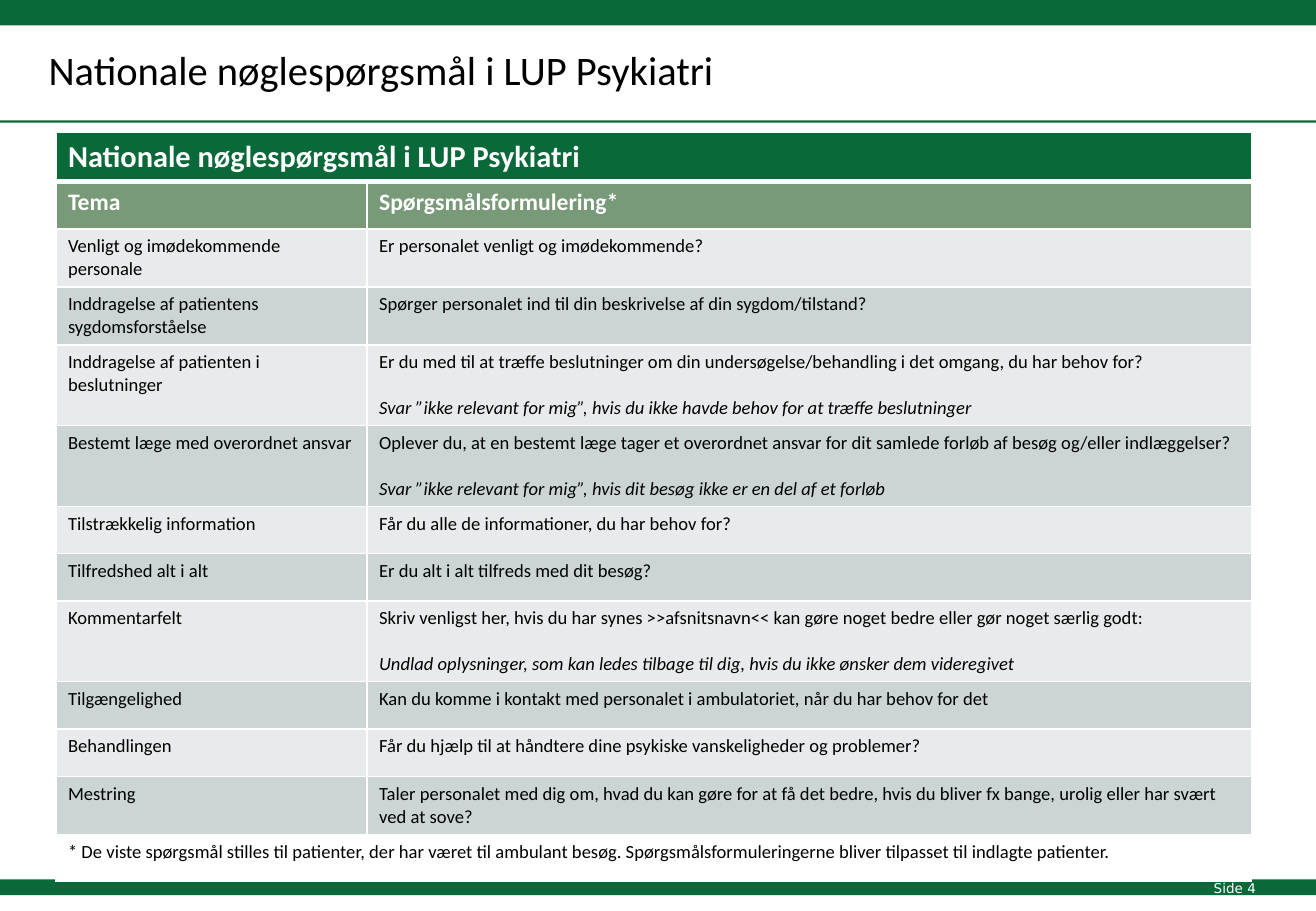
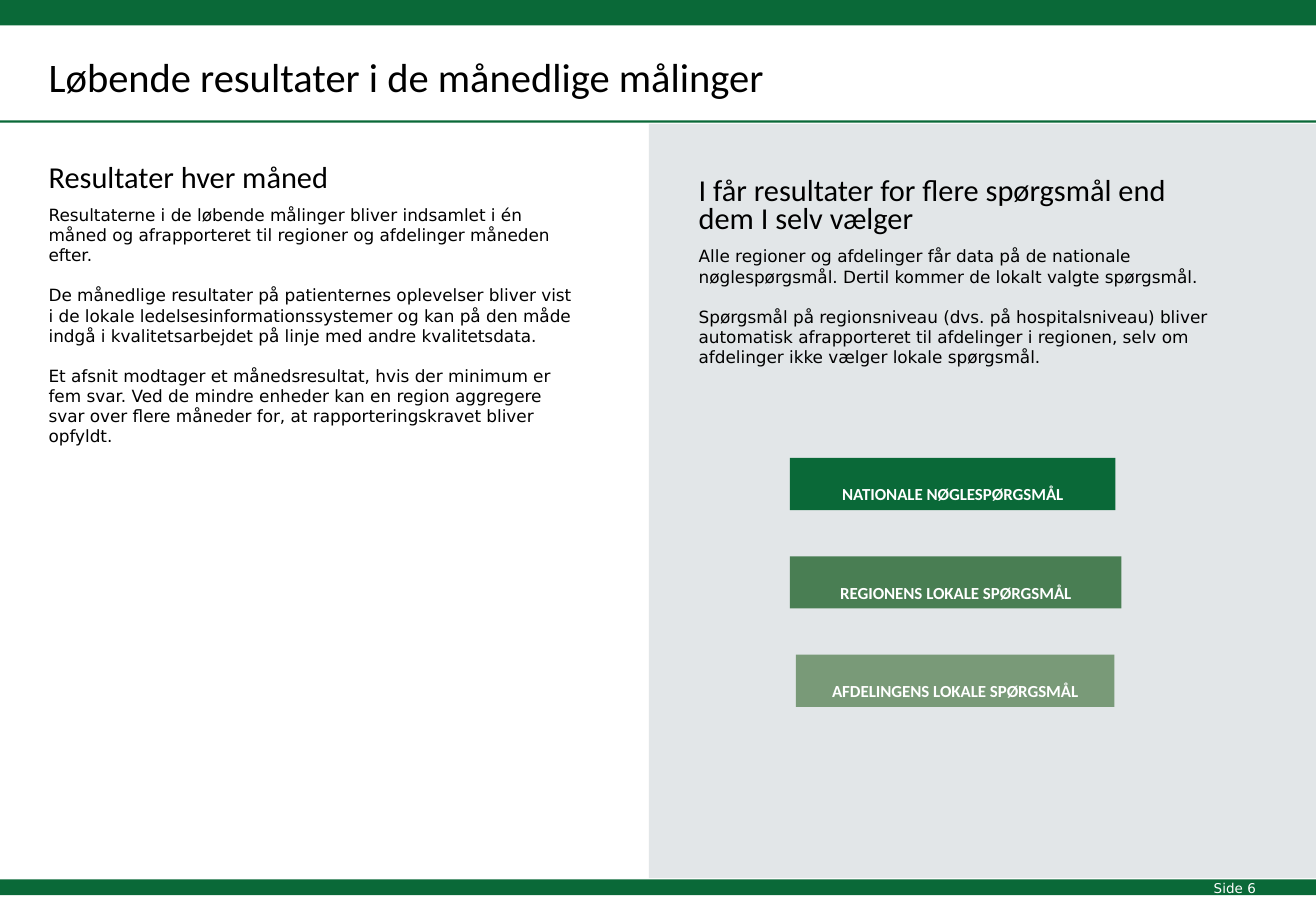
from lxml import etree
from pptx import Presentation
from pptx import util as u
from pptx.dml.color import RGBColor
from pptx.enum import shapes, text
from pptx.oxml.ns import qn

GREEN, MID_GREEN, SAGE = "0A6938", "497E53", "799A78"
LIGHT, GREY, SLATE = "E7EBEB", "CCD4D5", "425B67"
WHITE, BLACK = "FFFFFF", "000000"
HEAD_FONT, BODY_FONT = "Calibri", "DejaVu Sans"
TITLE_ONLY, TWO_CONTENT = 5, 3

QUESTIONS = [
    ("Venligt og imødekommende personale", 0.45,
     ["Er personalet venligt og imødekommende?"]),
    ("Inddragelse af patientens sygdomsforståelse", 0.45,
     ["Spørger personalet ind til din beskrivelse af din sygdom/tilstand?"]),
    ("Inddragelse af patienten i beslutninger", 0.63,
     ["Er du med til at træffe beslutninger om din undersøgelse/behandling i det omgang, du har behov for?",
      "Svar ”ikke relevant for mig”, hvis du ikke havde behov for at træffe beslutninger"]),
    ("Bestemt læge med overordnet ansvar", 0.63,
     ["Oplever du, at en bestemt læge tager et overordnet ansvar for dit samlede forløb af besøg og/eller indlæggelser?",
      "Svar ”ikke relevant for mig”, hvis dit besøg ikke er en del af et forløb"]),
    ("Tilstrækkelig information", 0.39,
     ["Får du alle de informationer, du har behov for?"]),
    ("Tilfredshed alt i alt", 0.39,
     ["Er du alt i alt tilfreds med dit besøg?"]),
    ("Kommentarfelt", 0.63,
     ["Skriv venligst her, hvis du har synes >>afsnitsnavn<< kan gøre noget bedre eller gør noget særlig godt:",
      "Undlad oplysninger, som kan ledes tilbage til dig, hvis du ikke ønsker dem videregivet"]),
    ("Tilgængelighed", 0.39,
     ["Kan du komme i kontakt med personalet i ambulatoriet, når du har behov for det"]),
    ("Behandlingen", 0.39,
     ["Får du hjælp til at håndtere dine psykiske vanskeligheder og problemer?"]),
    ("Mestring", 0.45,
     ["Taler personalet med dig om, hvad du kan gøre for at få det bedre, hvis du bliver fx bange, "
      "urolig eller har svært ved at sove?"]),
]
FOOTNOTE = ("* De viste spørgsmål stilles til patienter, der har været til ambulant besøg. "
            "Spørgsmålsformuleringerne bliver tilpasset til indlagte patienter.")
MONTHLY = [
    "Resultaterne i de løbende målinger bliver indsamlet i én måned og afrapporteret til regioner "
    "og afdelinger måneden efter.",
    "De månedlige resultater på patienternes oplevelser bliver vist i de lokale "
    "ledelsesinformationssystemer og kan på den måde indgå i kvalitetsarbejdet på linje med andre "
    "kvalitetsdata.",
    "Et afsnit modtager et månedsresultat, hvis der minimum er fem svar. Ved de mindre enheder kan "
    "en region aggregere svar over flere måneder for, at rapporteringskravet bliver opfyldt.",
]
LEVELS = [
    "Alle regioner og afdelinger får data på de nationale nøglespørgsmål. Dertil kommer de lokalt "
    "valgte spørgsmål.",
    "Spørgsmål på regionsniveau (dvs. på hospitalsniveau) bliver automatisk afrapporteret til "
    "afdelinger i regionen, selv om afdelinger ikke vælger lokale spørgsmål.",
]


def rgb(color):
    return RGBColor.from_string(color)


def place(sp, *box):
    sp.left, sp.top, sp.width, sp.height = (u.Inches(n) for n in box)


def add_run(p, wording, size, color=BLACK, font=HEAD_FONT, bold=False, italic=False):
    r = p.add_run()
    r.text = wording
    f = r.font
    f.size, f.name, f.bold, f.italic = u.Pt(size), font, bold, italic
    f.color.rgb = rgb(color)


class Deck:
    def __init__(self):
        self.prs = Presentation()
        self.prs.slide_width, self.prs.slide_height = u.Inches(10.83), u.Inches(7.5)
        self.s = None

    def slide(self, layout, title, top, height, number, line=None):
        first = self.s is None
        self.s = self.prs.slides.add_slide(self.prs.slide_layouts[layout])
        if first:
            self.master_bands()
        sp = self.s.shapes.title
        place(sp, 0.3, top, 9.13, height)
        p = self.frame(sp).paragraphs[0]
        p.alignment = text.PP_ALIGN.LEFT
        if line:
            p.line_spacing = u.Pt(line)
        add_run(p, title, 24)
        sp = self.s.shapes.add_textbox(*(u.Inches(n) for n in (9.89, 7.2, 0.56, 0.24)))
        tf = self.frame(sp)
        tf.word_wrap = False
        add_run(tf.paragraphs[0], f"Side {number}", 8, WHITE, BODY_FONT)

    def master_bands(self):
        """Move the three green bands to the slide master, shared by all slides."""
        tree = self.prs.slide_master.shapes.element
        for top, height in ((-0.07, 0.28), (0.99, 0.02), (7.24, 0.13)):
            band = self.rect(0, top, 10.83, height, GREEN)
            tree.insert(2, band.element)

    def frame(self, sp):
        tf = sp.text_frame
        tf.word_wrap = True
        tf.auto_size = text.MSO_AUTO_SIZE.NONE
        tf.vertical_anchor = text.MSO_ANCHOR.TOP
        return tf

    def rect(self, left, top, width, height, color):
        box = (u.Inches(n) for n in (left, top, width, height))
        sp = self.s.shapes.add_shape(shapes.MSO_SHAPE.RECTANGLE, *box)
        sp.shadow.inherit = False
        sp.fill.solid()
        sp.fill.fore_color.rgb = rgb(color)
        sp.line.fill.background()
        return sp

    def panel(self, left, top, width, height, color, opacity):
        """Draw a see-through rectangle behind everything else on the slide."""
        sp = self.rect(left, top, width, height, color)
        clr = sp.element.spPr.find(".//" + qn("a:srgbClr"))
        etree.SubElement(clr, qn("a:alpha"), val=str(opacity * 1000))
        self.s.shapes.element.insert(2, sp.element)

    def bar(self, left, top, width, height, color, label):
        sp = self.rect(left, top, width, height, color)
        tf = self.frame(sp)
        tf.vertical_anchor = text.MSO_ANCHOR.BOTTOM
        p = tf.paragraphs[0]
        p.alignment = text.PP_ALIGN.CENTER
        add_run(p, label, 10, WHITE, bold=True)

    def body(self, idx, box, heading, paragraphs, line=None):
        sp = self.s.placeholders[idx]
        place(sp, *box)
        tf = self.frame(sp)
        for i, wording in enumerate([heading] + paragraphs):
            p = tf.paragraphs[0] if i == 0 else tf.add_paragraph()
            pPr = p._p.get_or_add_pPr()
            pPr.set("marL", "0")
            pPr.set("indent", "0")
            etree.SubElement(pPr, qn("a:buNone"))
            p.space_before = u.Pt(11.6 if i > 1 else 0)
            if i == 0:
                p.space_after = u.Pt(6)
                if line:
                    p.line_spacing = u.Pt(line)
                add_run(p, wording, 18)
            else:
                add_run(p, wording, 10, font=BODY_FONT)

    def cell(self, cell, fill, lines, size=11, color=BLACK, bold=False, top=1, bottom=1):
        """Fill a cell; any line after the first is an italic note, one line below."""
        tcPr = cell._tc.get_or_add_tcPr()
        for side, width in (("L", 1), ("R", 1), ("T", top), ("B", bottom)):
            ln = etree.SubElement(tcPr, qn("a:ln" + side), w=str(u.Pt(width)))
            solid = etree.SubElement(ln, qn("a:solidFill"))
            etree.SubElement(solid, qn("a:srgbClr"), val=WHITE)
        cell.fill.solid()
        cell.fill.fore_color.rgb = rgb(fill)
        for i, wording in enumerate(lines):
            p = cell.text_frame.paragraphs[0] if i == 0 else cell.text_frame.add_paragraph()
            if i:
                p.space_before = u.Pt(13.4)
            add_run(p, wording, size, color, bold=bold, italic=i > 0)

    def question_table(self, left, top, widths, heading, columns, questions, footnote):
        heights = [0.39, 0.39] + [q[1] for q in questions] + [0.39]
        box = (u.Inches(n) for n in (left, top, sum(widths), sum(heights)))
        table = self.s.shapes.add_table(len(heights), len(widths), *box).table
        table.first_row = table.horz_banding = False
        for col, width in zip(table.columns, widths):
            col.width = u.Inches(width)
        for row, height in zip(table.rows, heights):
            row.height = u.Inches(height)
        last = len(heights) - 1
        for row in (0, last):
            table.cell(row, 0).merge(table.cell(row, 1))
        self.cell(table.cell(0, 0), GREEN, [heading], 18, WHITE, True, bottom=3)
        self.cell(table.cell(0, 1), GREEN, [], bottom=3)
        for c, label in enumerate(columns):
            self.cell(table.cell(1, c), SAGE, [label], 14, WHITE, True, top=3)
        for r, (theme, _, wording) in enumerate(questions, 2):
            fill = GREY if r % 2 else LIGHT
            self.cell(table.cell(r, 0), fill, [theme])
            self.cell(table.cell(r, 1), fill, wording)
        self.cell(table.cell(last, 0), WHITE, [footnote])
        self.cell(table.cell(last, 1), WHITE, [])


def main():
    deck = Deck()
    heading = "Nationale nøglespørgsmål i LUP Psykiatri"
    deck.slide(TITLE_ONLY, heading, 0.44, 0.38, 4, line=20)
    deck.question_table(0.46, 1.09, (2.56, 7.28), heading,
                        ("Tema", "Spørgsmålsformulering*"), QUESTIONS, FOOTNOTE)

    deck.slide(TWO_CONTENT, "Løbende resultater i de månedlige målinger", 0.38, 0.5, 6)
    deck.panel(5.34, 1.02, 5.49, 6.21, SLATE, 15)
    deck.body(1, (0.3, 1.25, 4.57, 2.71), "Resultater hver måned", MONTHLY)
    deck.body(2, (5.65, 1.42, 4.43, 1.67),
              "I får resultater for flere spørgsmål end dem I selv vælger", LEVELS, line=17)
    bars = [(6.5, 2.68, GREEN, "NATIONALE NØGLESPØRGSMÅL"),
            (6.5, 2.73, MID_GREEN, "REGIONENS LOKALE SPØRGSMÅL"),
            (6.55, 2.62, SAGE, "AFDELINGENS LOKALE SPØRGSMÅL")]
    for i, (left, width, color, label) in enumerate(bars):
        deck.bar(left, 3.77 + 0.81 * i, width, 0.43, color, label)
    deck.prs.save("out.pptx")


if __name__ == "__main__":
    main()
